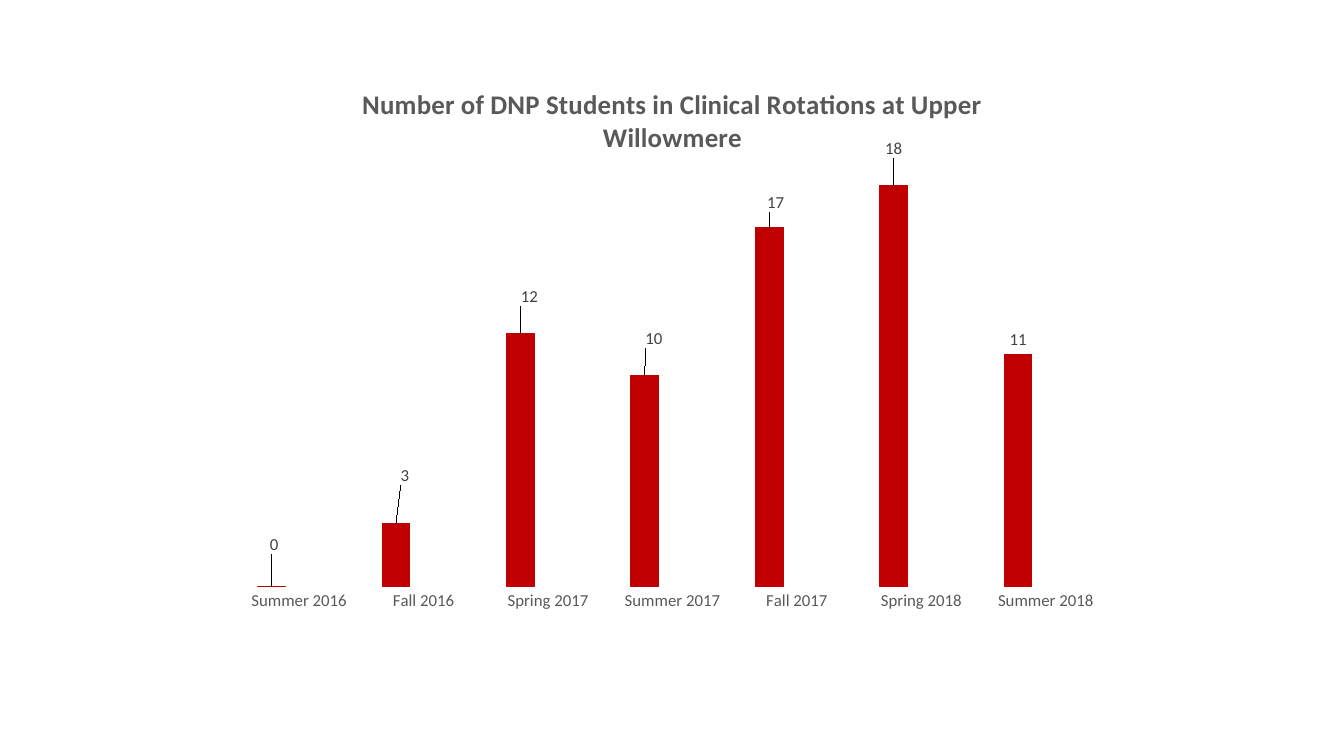
from lxml import etree
from pptx import Presentation
from pptx.chart.data import CategoryChartData
from pptx.dml.color import RGBColor
from pptx.enum import chart as ch
from pptx.oxml.ns import qn
from pptx.util import Inches, Pt

TITLE = "Number of DNP Students in Clinical Rotations at Upper Willowmere"
STUDENTS = [
    ("Summer 2016", 0),
    ("Fall 2016", 3),
    ("Spring 2017", 12),
    ("Summer 2017", 10),
    ("Fall 2017", 17),
    ("Spring 2018", 19),
    ("Summer 2018", 11),
]
LABEL_SHIFTS = [(0.003, -0.05), (0.01, -0.06), (0.01, -0.04),
                (0.01, -0.04), (0.007, -0.02), (0, -0.04)]
LABEL_TEXTS = {5: "18"}
PLOT = {"x": 0.02, "y": 0.18, "w": 0.96, "h": 0.755}
FONT = "Calibri"
RED = RGBColor(0xC0, 0x00, 0x00)
ORANGE = RGBColor(0xC0, 0x50, 0x4D)
GREEN = RGBColor(0x9B, 0xBB, 0x59)
GRAY = RGBColor(0x59, 0x59, 0x59)
DARK = RGBColor(0x40, 0x40, 0x40)
BLACK = RGBColor(0, 0, 0)


def style(font, size, color, bold=False):
    font.name, font.size, font.bold = FONT, Pt(size), bold
    font.color.rgb = color


def manual_layout(settings):
    layout = etree.Element(qn("c:layout"))
    manual = etree.SubElement(layout, qn("c:manualLayout"))
    for tag, value in settings.items():
        etree.SubElement(manual, qn("c:" + tag)).set("val", str(value))
    return layout


def main():
    prs = Presentation()
    prs.slide_width, prs.slide_height = Inches(13.33), Inches(7.5)
    s = prs.slides.add_slide(prs.slide_layouts[6])

    data = CategoryChartData()
    data.categories = [term for term, _ in STUDENTS]
    data.add_series("Series 1", [count for _, count in STUDENTS])
    for name in ("Series 2", "Series 3"):
        data.add_series(name, [None] * len(STUDENTS))
    chart = s.shapes.add_chart(
        ch.XL_CHART_TYPE.COLUMN_CLUSTERED, Inches(2.17), Inches(0.63),
        Inches(9), Inches(5.55), data).chart
    style(chart.font, 10, BLACK)
    chart.has_legend = False
    chart.has_title = True
    r = chart.chart_title.text_frame.paragraphs[0].add_run()
    r.text = TITLE
    style(r.font, 19.2, GRAY, True)

    cat = chart.category_axis
    cat.major_tick_mark = cat.minor_tick_mark = ch.XL_TICK_MARK.NONE
    cat.format.line.fill.background()
    style(cat.tick_labels.font, 12, GRAY)
    val = chart.value_axis
    val.minimum_scale, val.maximum_scale = 0, 20
    val.has_major_gridlines = False
    val.visible = False

    area = chart.plots[0]
    area.gap_width, area.overlap = 150, 0
    area.vary_by_categories = False
    for series, color in zip(area.series, (RED, ORANGE, GREEN)):
        series.format.fill.solid()
        series.format.fill.fore_color.rgb = color
        labels = series.data_labels
        labels.show_value = True
        labels.position = ch.XL_LABEL_POSITION.OUTSIDE_END
        style(labels.font, 12, DARK)

    columns = area.series[0]
    columns.format.line.color.rgb = RED
    columns.format.line.width = Pt(0.75)
    for i, (dx, dy) in enumerate(LABEL_SHIFTS):
        label = columns.points[i].data_label
        if i in LABEL_TEXTS:
            r = label.text_frame.paragraphs[0].add_run()
            r.text = LABEL_TEXTS[i]
            style(r.font, 12, DARK)
        else:
            style(label.font, 12, DARK)
        label.position = ch.XL_LABEL_POSITION.OUTSIDE_END
        element = columns.data_labels._element.findall(qn("c:dLbl"))[i]
        element.insert(1, manual_layout({"x": dx, "y": dy}))

    plot_area = chart._chartSpace.chart.plotArea
    for old in plot_area.findall(qn("c:layout")):
        plot_area.remove(old)
    plot_area.insert(0, manual_layout(
        {"layoutTarget": "inner", "xMode": "edge", "yMode": "edge", **PLOT}))
    prs.save("out.pptx")


if __name__ == "__main__":
    main()
